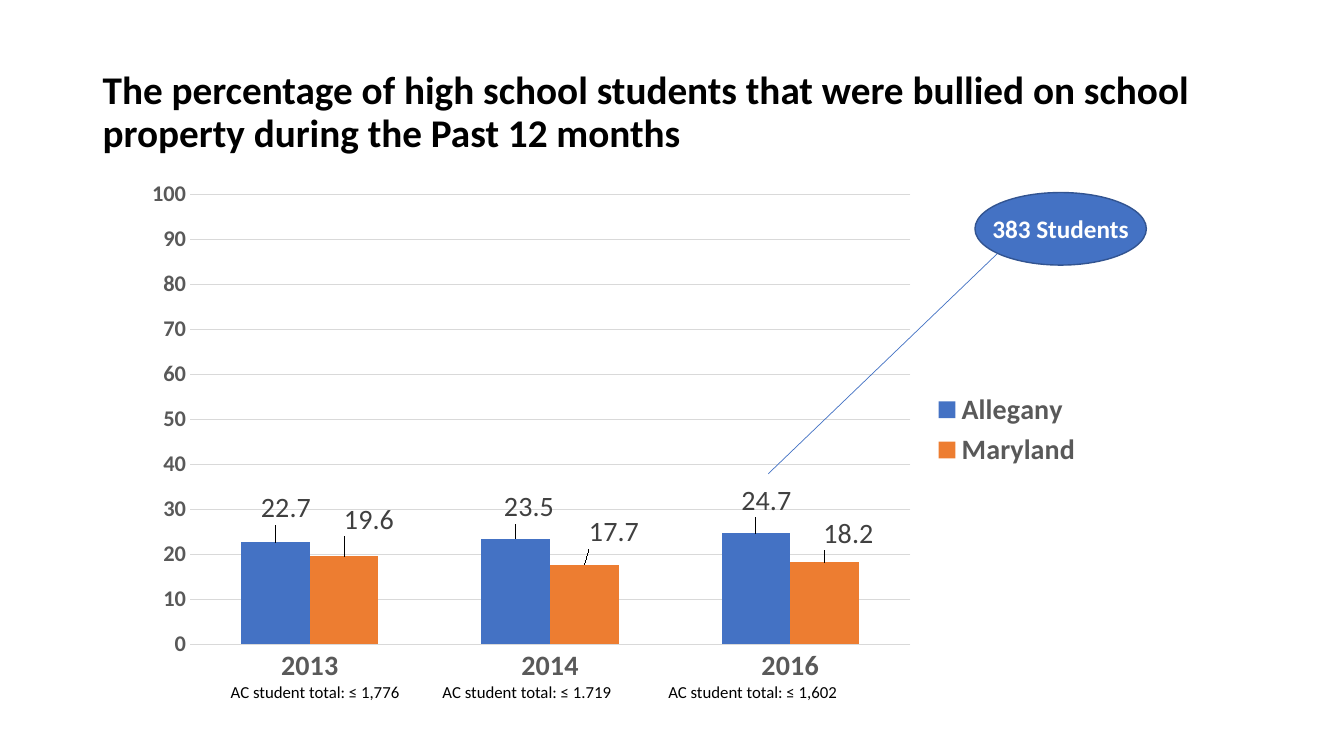
from lxml.etree import SubElement
from pptx import Presentation
from pptx.chart.data import CategoryChartData
from pptx.dml.color import RGBColor
from pptx.enum.chart import (XL_CHART_TYPE, XL_LABEL_POSITION,
                             XL_LEGEND_POSITION, XL_TICK_MARK)
from pptx.enum.shapes import MSO_CONNECTOR, MSO_SHAPE
from pptx.enum.text import MSO_ANCHOR, PP_ALIGN
from pptx.oxml import parse_xml
from pptx.oxml.ns import nsdecls, qn
from pptx.util import Inches, Pt

BLACK = RGBColor(0x00, 0x00, 0x00)
WHITE = RGBColor(0xFF, 0xFF, 0xFF)
BLUE = RGBColor(0x44, 0x72, 0xC4)
NAVY = RGBColor(0x32, 0x54, 0x91)
ORANGE = RGBColor(0xED, 0x7D, 0x31)
GREY = RGBColor(0x59, 0x59, 0x59)
DARK = RGBColor(0x40, 0x40, 0x40)
PALE = RGBColor(0xD9, 0xD9, 0xD9)

TITLE = ("The percentage of high school students that were bullied "
         "on school property during the Past 12 months")
YEARS = ["2013", "2014", "2016"]
# name, colour, values, label shifts (percent of chart width and height)
SERIES = [
    ("Allegany", BLUE, (22.7, 23.5, 24.7), ((1.1, -2.5), (1.4, -2), (1.1, -2.2))),
    ("Maryland", ORANGE, (19.6, 17.7, 18.2), ((2.6, -3), (3.1, -2.2), (2.5, -1.5))),
]
TOTALS = [(2.19, "1,776"), (4.29, "1.719"), (6.53, "1,602")]
CALLOUT = "383 Students"
PLOT = {"x": 0.06, "y": 0.05, "w": 0.75, "h": 0.86}


def style(font, size, color, bold=False):
    looks = {"name": "Calibri", "size": Pt(size), "bold": bold}
    for key, val in looks.items():
        setattr(font, key, val)
    font.color.rgb = color


def write(shape, text, size, color, bold=False, wrap=True):
    frame = shape.text_frame
    frame.word_wrap = wrap
    frame.vertical_anchor = MSO_ANCHOR.MIDDLE
    para = frame.paragraphs[0]
    run = para.add_run()
    run.text = text
    style(run.font, size, color, bold)
    return para


def layout(**parts):
    """Return a manual chart layout holding the given settings."""
    root = parse_xml(f"<c:layout {nsdecls('c')}><c:manualLayout/></c:layout>")
    for tag, val in parts.items():
        SubElement(root[0], qn(f"c:{tag}")).set("val", str(val))
    return root


def add_bars(slide):
    data = CategoryChartData()
    data.categories = YEARS
    for name, _, vals, _ in SERIES:
        data.add_series(name, vals)
    box = [Inches(n) for n in (1.31, 1.67, 9.53, 5.19)]
    chart = slide.shapes.add_chart(XL_CHART_TYPE.COLUMN_CLUSTERED, *box, data).chart
    style(chart.font, 10, BLACK)
    chart.has_title = False

    chart.has_legend = True
    chart.legend.position = XL_LEGEND_POSITION.RIGHT
    chart.legend.include_in_layout = False
    style(chart.legend.font, 20, GREY, True)

    for axis, size in ((chart.category_axis, 20), (chart.value_axis, 16)):
        axis.major_tick_mark = axis.minor_tick_mark = XL_TICK_MARK.NONE
        axis.format.line.fill.background()
        style(axis.tick_labels.font, size, GREY, True)
    scale = {"minimum_scale": 0, "maximum_scale": 100, "major_unit": 10}
    for key, val in scale.items():
        setattr(chart.value_axis, key, val)
    grid = chart.value_axis.major_gridlines.format.line
    grid.color.rgb, grid.width = PALE, Pt(0.75)

    plot = chart.plots[0]
    plot.gap_width, plot.overlap, plot.vary_by_categories = 150, 0, False
    for bars, (_, color, _, shifts) in zip(plot.series, SERIES):
        bars.format.fill.solid()
        bars.format.fill.fore_color.rgb = color
        bars.data_labels.show_value = True
        style(bars.data_labels.font, 20, DARK)
        for num, (dx, dy) in enumerate(shifts):
            label = bars.points[num].data_label
            style(label.font, 20, DARK)
            label.position = XL_LABEL_POSITION.OUTSIDE_END
        tags = bars.data_labels._element.findall(qn("c:dLbl"))
        for tag, (dx, dy) in zip(tags, shifts):
            tag.insert(1, layout(x=dx / 100, y=dy / 100))

    area = chart._chartSpace.chart.plotArea
    for old in area.findall(qn("c:layout")):
        area.remove(old)
    area.insert(0, layout(layoutTarget="inner", xMode="edge", yMode="edge", **PLOT))


def add_callout(slide):
    ends = [Inches(n) for n in (7.62, 4.7, 9.94, 2.47)]
    line = slide.shapes.add_connector(MSO_CONNECTOR.STRAIGHT, *ends)
    line.line.color.rgb, line.line.width = BLUE, Pt(0.5)
    SubElement(line._element.spPr, qn("a:effectLst"))

    box = [Inches(n) for n in (9.67, 1.91, 1.7, 0.72)]
    oval = slide.shapes.add_shape(MSO_SHAPE.OVAL, *box)
    oval.shadow.inherit = False
    oval.fill.solid()
    oval.fill.fore_color.rgb = BLUE
    oval.line.color.rgb, oval.line.width = NAVY, Pt(1)
    write(oval, CALLOUT, 18, WHITE, True, wrap=False).alignment = PP_ALIGN.CENTER


def main():
    deck = Presentation()
    deck.slide_width, deck.slide_height = Inches(13.33), Inches(7.5)
    slide = deck.slides.add_slide(deck.slide_layouts[6])

    box = [Inches(n) for n in (0.92, 0.4, 11.5, 1.45)]
    title = slide.shapes.add_textbox(*box)
    write(title, TITLE, 28, BLACK, True).line_spacing = 0.9
    add_bars(slide)
    add_callout(slide)
    for left, total in TOTALS:
        box = [Inches(n) for n in (left, 6.71, 1.92, 0.3)]
        note = slide.shapes.add_textbox(*box)
        write(note, f"AC student total: ≤ {total}", 12, BLACK)
    deck.save("out.pptx")


if __name__ == "__main__":
    main()
